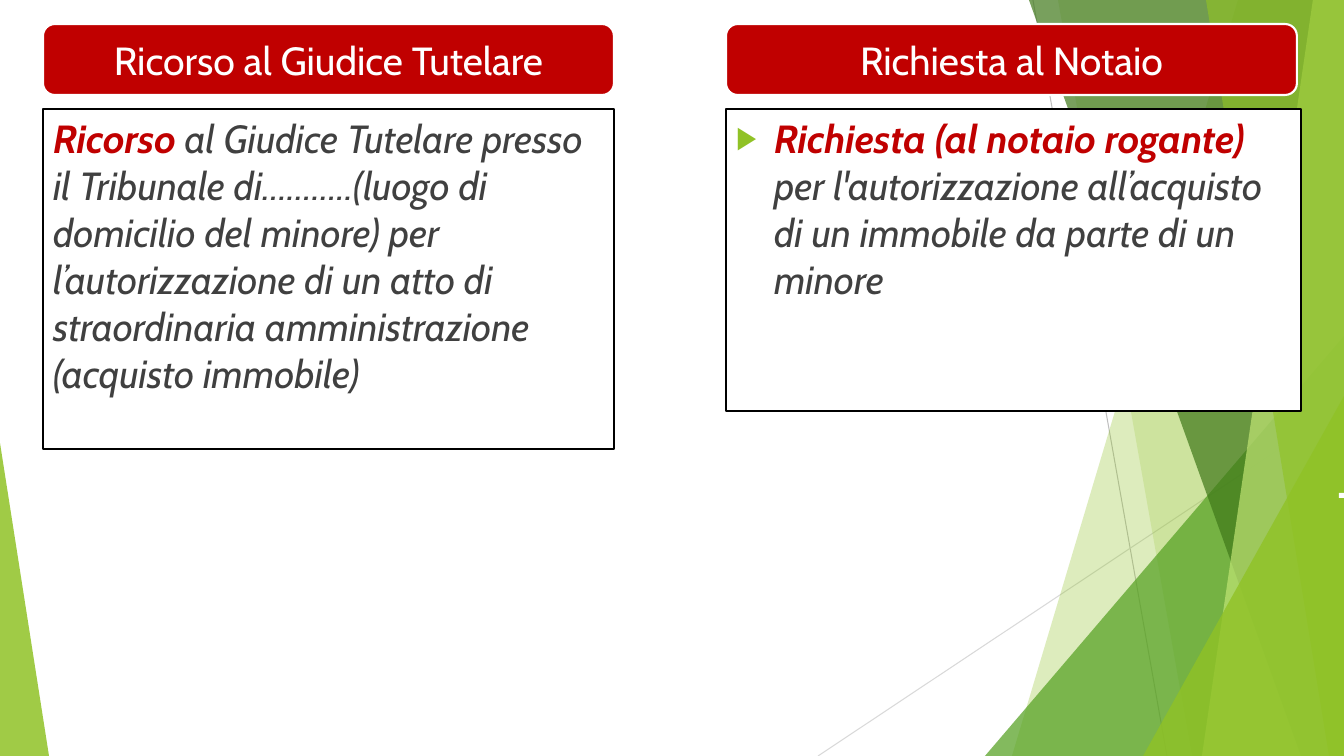
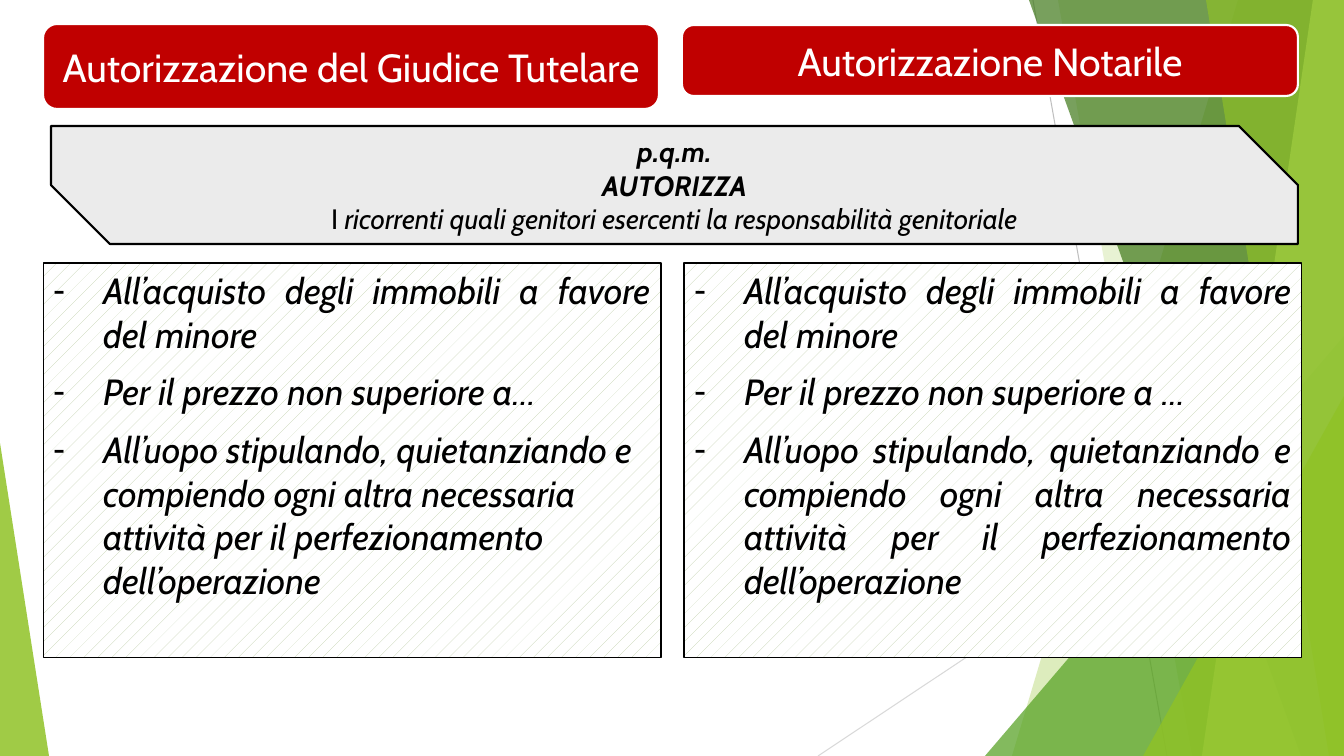
from dataclasses import dataclass

from lxml.etree import SubElement
from pptx import Presentation
from pptx.dml.color import RGBColor
from pptx.enum.dml import MSO_PATTERN
from pptx.enum.shapes import MSO_CONNECTOR, MSO_SHAPE
from pptx.enum.text import MSO_ANCHOR, MSO_AUTO_SIZE, PP_ALIGN
from pptx.oxml.ns import qn
from pptx.util import Emu, Pt


@dataclass(frozen=True)
class Theme:
    font: str = "Cabin"
    heading_size: int = 28
    list_size: int = 26
    ruling_size: int = 20
    red: RGBColor = RGBColor.from_string("C00000")
    white: RGBColor = RGBColor.from_string("FFFFFF")
    black: RGBColor = RGBColor.from_string("000000")
    body: RGBColor = RGBColor.from_string("404040")
    panel: RGBColor = RGBColor.from_string("EBEBEB")
    hatch: RGBColor = RGBColor.from_string("C0CFAA")
    leaf: RGBColor = RGBColor.from_string("90C226")
    grass: RGBColor = RGBColor.from_string("54A021")
    forest: RGBColor = RGBColor.from_string("3F7819")
    lime: RGBColor = RGBColor.from_string("C0E474")
    ray: RGBColor = RGBColor.from_string("BFBFBF")
    pale_ray: RGBColor = RGBColor.from_string("D9D9D9")


THEME = Theme()
WIDTH, HEIGHT = 1344, 756
PX = 12192000 / WIDTH


def px(*lengths):
    """Turn px lengths into EMU."""
    return [Emu(round(length * PX)) for length in lengths]


def write(shape, paragraphs, size, color, align=PP_ALIGN.LEFT, anchor=MSO_ANCHOR.TOP,
          bullet=None, bullet_color=None, indent=0, before=0):
    """Fill a shape with paragraphs, each a list of (text, style[, color]); style holds b and i."""
    frame = shape.text_frame
    frame.word_wrap = True
    frame.auto_size = MSO_AUTO_SIZE.NONE
    frame.vertical_anchor = anchor
    for number, runs in enumerate(paragraphs):
        paragraph = frame.add_paragraph() if number else frame.paragraphs[0]
        paragraph.alignment = align
        paragraph.space_before = Pt(before)
        properties = paragraph._p.get_or_add_pPr()
        hanging = px(indent)[0]
        properties.set("marL", str(hanging))
        properties.set("indent", str(-hanging))
        if bullet_color is not None:
            SubElement(SubElement(properties, qn("a:buClr")), qn("a:srgbClr"), val=str(bullet_color))
            SubElement(properties, qn("a:buSzPct"), val="80000")
        if bullet:
            SubElement(properties, qn("a:buChar"), char=bullet)
        else:
            SubElement(properties, qn("a:buNone"))
        for text, style, *own_color in runs:
            run = paragraph.add_run()
            run.text = text
            run.font.name = THEME.font
            run.font.size = Pt(size)
            run.font.bold = "b" in style
            run.font.italic = "i" in style
            run.font.color.rgb = own_color[0] if own_color else color


deck = Presentation()
deck.slide_width, deck.slide_height = px(WIDTH, HEIGHT)
layout = deck.slide_layouts.get_by_name("Two Content")
requests = deck.slides.add_slide(layout)
rulings = deck.slides.add_slide(layout)
for slide in (requests, rulings):
    title = slide.shapes.title.element
    title.getparent().remove(title)

# Green facets, drawn once and kept on the layout
backdrop = requests.shapes.add_group_shape()
for ends, color in (((1033, 0, 1167, HEIGHT), THEME.ray),
                    ((WIDTH, 406, 818, HEIGHT), THEME.pale_ray)):
    ray = backdrop.shapes.add_connector(MSO_CONNECTOR.STRAIGHT, *px(*ends))
    ray.line.color.rgb = color
    ray.line.width = Pt(0.75)
    SubElement(ray.element.spPr, qn("a:effectLst"))

# Bands are (top x, bottom x) up to the right edge; corners are (left, top, width, apex)
facets = [
    ((1238, 1012), THEME.leaf, 30),
    ((1058, 1192), THEME.leaf, 20),
    ((985, 336, 359, 1), THEME.grass, 72),
    ((1029, 1301), THEME.forest, 70),
    ((1313, 1202), THEME.lime, 70),
    ((1206, 1329), THEME.leaf, 65),
    ((1143, 396, 201, 1), THEME.leaf, 80),
    ((0, 443, 49, 0), THEME.leaf, 85),
]
for outline, color, opacity in facets:
    if len(outline) == 2:
        top_x, bottom_x = outline
        builder = backdrop.shapes.build_freeform(top_x, 0, scale=PX)
        builder.add_line_segments([(WIDTH, 0), (WIDTH, HEIGHT), (bottom_x, HEIGHT)])
        facet = builder.convert_to_shape()
    else:
        left, top, width, apex = outline
        facet = backdrop.shapes.add_shape(MSO_SHAPE.ISOSCELES_TRIANGLE,
                                          *px(left, top, width, HEIGHT - top))
        facet.adjustments[0] = apex
    facet.shadow.inherit = False
    facet.line.fill.background()
    facet.fill.solid()
    facet.fill.fore_color.rgb = color
    tint = facet.element.spPr.find(qn("a:solidFill")).find(qn("a:srgbClr"))
    SubElement(tint, qn("a:alpha"), val=str(opacity * 1000))

for number, identity in enumerate(backdrop.element.xpath(".//p:cNvPr"), 100):
    identity.set("id", str(number))
layout.shapes.element.append(backdrop.element)

# Text columns
request_columns = [
    (1, (43, 109, 571, 340), {}, [
        ("Ricorso", "bi", THEME.red),
        (" al Giudice Tutelare presso il Tribunale di………..(luogo di domicilio del minore) per "
         "l’autorizzazione di un atto di straordinaria amministrazione (acquisto immobile)", "i")]),
    (2, (726, 109, 575, 302), {"bullet": "▶", "bullet_color": THEME.leaf, "indent": 38}, [
        ("Richiesta (al notaio rogante)", "bi", THEME.red),
        (" per l'autorizzazione all’acquisto di un immobile da parte di un minore", "i")]),
]
for index, box, bullets, runs in request_columns:
    column = requests.placeholders[index]
    column.left, column.top, column.width, column.height = px(*box)
    column.fill.solid()
    column.fill.fore_color.rgb = THEME.white
    column.line.color.rgb = THEME.black
    column.line.width = Pt(1.5)
    write(column, [runs], THEME.heading_size, THEME.body, before=10, **bullets)

ruling_columns = [
    (1, 43, "Per il prezzo non superiore a…", PP_ALIGN.LEFT),
    (2, 684, "Per il prezzo non superiore a …", PP_ALIGN.JUSTIFY),
]
for index, left, price, closing_align in ruling_columns:
    column = rulings.placeholders[index]
    column.left, column.top, column.width, column.height = px(left, 263, 618, 395)
    column.fill.patterned()
    column.fill.pattern = MSO_PATTERN.PERCENT_5
    column.fill.fore_color.rgb = THEME.hatch
    column.fill.back_color.rgb = THEME.white
    column.line.color.rgb = THEME.black
    column.line.width = Pt(0.75)
    terms = [
        "All’acquisto degli immobili a favore del minore",
        price,
        "All’uopo stipulando, quietanziando e compiendo ogni altra necessaria attività "
        "per il perfezionamento dell’operazione",
    ]
    write(column, [[(term, "i")] for term in terms], THEME.list_size, THEME.black,
          align=PP_ALIGN.JUSTIFY, bullet="-", indent=50, before=10)
    column.text_frame.paragraphs[-1].alignment = closing_align

# Red headings
headings = [
    (requests, (43, 24, 571, 71), "Ricorso al Giudice Tutelare"),
    (requests, (726, 24, 571, 71), "Richiesta al Notaio"),
    (rulings, (43, 24, 616, 85), "Autorizzazione del Giudice Tutelare"),
    (rulings, (682, 25, 616, 71), "Autorizzazione Notarile"),
]
for slide, box, text in headings:
    heading = slide.shapes.add_shape(MSO_SHAPE.ROUNDED_RECTANGLE, *px(*box))
    heading.shadow.inherit = False
    heading.fill.solid()
    heading.fill.fore_color.rgb = THEME.red
    heading.line.color.rgb = THEME.white
    heading.line.width = Pt(1.5)
    write(heading, [[(text, "")]], THEME.heading_size, THEME.white,
          align=PP_ALIGN.CENTER, anchor=MSO_ANCHOR.MIDDLE)

# Small mark on the right edge
edge_mark = requests.shapes.add_shape(MSO_SHAPE.RECTANGLE, *px(1339, 493, 5, 5))
edge_mark.shadow.inherit = False
edge_mark.fill.solid()
edge_mark.fill.fore_color.rgb = THEME.white
edge_mark.line.fill.background()

# Ruling shared by both columns
ruling = rulings.shapes.add_shape(MSO_SHAPE.SNIP_2_DIAG_RECTANGLE, *px(51, 126, 1247, 118))
ruling.adjustments[0] = 0
ruling.adjustments[1] = 0.5
ruling.shadow.inherit = False
ruling.fill.solid()
ruling.fill.fore_color.rgb = THEME.panel
ruling.line.color.rgb = THEME.black
ruling.line.width = Pt(1.5)
write(ruling, [
    [("p.q.m.", "bi")],
    [("AUTORIZZA", "bi")],
    [("I", ""), (" ricorrenti quali genitori esercenti la responsabilità genitoriale", "i")],
], THEME.ruling_size, THEME.black, align=PP_ALIGN.CENTER, anchor=MSO_ANCHOR.MIDDLE)

deck.save("out.pptx")
